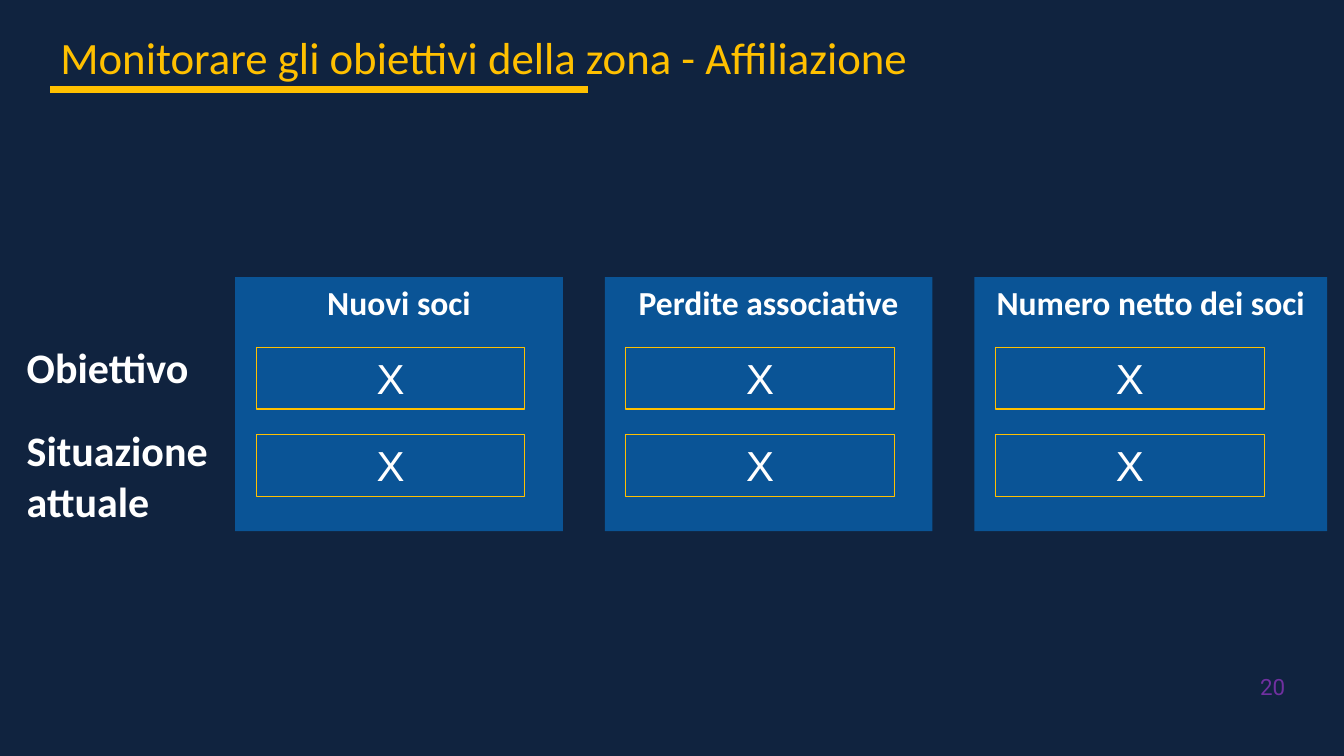
import dataclasses

import lxml.etree
import pptx
import pptx.dml.color
import pptx.enum.shapes
import pptx.enum.text
import pptx.oxml.ns
import pptx.util

Pt = pptx.util.Pt
Align = pptx.enum.text.PP_ALIGN
Anchor = pptx.enum.text.MSO_ANCHOR

NAVY = "10233F"
BLUE = "0A5496"
GOLD = "FFC000"
WHITE = "FFFFFF"
PURPLE = "7030A0"

PANEL_TOP = 198
PANEL_HEIGHT = 181.4
PANEL_LEFT = 168
PANEL_PITCH = 264
VALUE_INSET = 15
VALUE_WIDTH = 192
VALUE_HEIGHT = 44
VALUE_TOPS = (248.2, 310.4)


@dataclasses.dataclass
class Panel:
    heading: str
    width: float
    values: tuple[str, str] = ("X", "X")


@dataclasses.dataclass
class Label:
    text: str
    top: float
    height: float


PANELS = [
    Panel("Nuovi soci", 234),
    Panel("Perdite associative", 234),
    Panel("Numero netto dei soci", 252),
]
LABELS = [
    Label("Obiettivo", 240.5, 44),
    Label("Situazione attuale", 300, 80),
]


def rgb(value: str) -> pptx.dml.color.RGBColor:
    return pptx.dml.color.RGBColor.from_string(value)


def write(box, text: str, *, size: float, font: str = "Calibri", color: str = WHITE,
          bold: bool = False, align=Align.LEFT, anchor=Anchor.TOP) -> None:
    frame = box.text_frame
    frame.word_wrap = True
    frame.vertical_anchor = anchor
    para = frame.paragraphs[0]
    para.alignment = align
    span = para.add_run()
    span.text = text
    span.font.size = Pt(size)
    span.font.name = font
    span.font.bold = bold
    span.font.color.rgb = rgb(color)


def add_text(page, left: float, top: float, width: float, height: float,
             text: str, **style):
    box = page.shapes.add_textbox(Pt(left), Pt(top), Pt(width), Pt(height))
    write(box, text, **style)
    return box


def add_box(group, left: float, top: float, width: float, height: float,
            text: str, *, fill: str = "", line: str = "", **style) -> None:
    box = group.shapes.add_shape(pptx.enum.shapes.MSO_SHAPE.RECTANGLE,
                                 Pt(left), Pt(top), Pt(width), Pt(height))
    box.shadow.inherit = False
    if fill:
        box.fill.solid()
        box.fill.fore_color.rgb = rgb(fill)
    else:
        box.fill.background()
    if line:
        box.line.color.rgb = rgb(line)
        box.line.width = Pt(0.75)
    else:
        box.line.fill.background()
    write(box, text, align=Align.CENTER, **style)


def add_panel(page, panel: Panel, left: float) -> None:
    group = page.shapes.add_group_shape()
    add_box(group, left, PANEL_TOP, panel.width, PANEL_HEIGHT, panel.heading,
            fill=BLUE, size=24, bold=True)
    for top, value in zip(VALUE_TOPS, panel.values):
        add_box(group, left + VALUE_INSET, top, VALUE_WIDTH, VALUE_HEIGHT, value,
                line=GOLD, size=30, font="Arial")


def add_rule(page, left: float, right: float, top: float) -> None:
    rule = page.shapes.add_connector(pptx.enum.shapes.MSO_CONNECTOR.STRAIGHT,
                                     Pt(left), Pt(top), Pt(right), Pt(top))
    rule.line.color.rgb = rgb(GOLD)
    rule.line.width = Pt(4.5)
    lxml.etree.SubElement(rule._element.spPr, pptx.oxml.ns.qn("a:effectLst"))


def main() -> None:
    deck = pptx.Presentation()
    deck.slide_width = Pt(960)
    deck.slide_height = Pt(540)
    page = deck.slides.add_slide(deck.slide_layouts[6])
    page.background.fill.solid()
    page.background.fill.fore_color.rgb = rgb(NAVY)

    number = add_text(page, 874, 477.4, 44, 26.6, "20", size=16, font="Roboto",
                      color=PURPLE, align=Align.RIGHT, anchor=Anchor.MIDDLE)
    number.text_frame.margin_left = number.text_frame.margin_right = Pt(0)
    add_text(page, 36, 18, 630, 46, "Monitorare gli obiettivi della zona - Affiliazione",
             size=32, color=GOLD)
    add_rule(page, 36, 420, 64)
    for label in LABELS:
        add_text(page, 12, label.top, 156, label.height, label.text, size=30, bold=True)
    for index, panel in enumerate(PANELS):
        add_panel(page, panel, PANEL_LEFT + index * PANEL_PITCH)

    deck.save("out.pptx")


if __name__ == "__main__":
    main()
